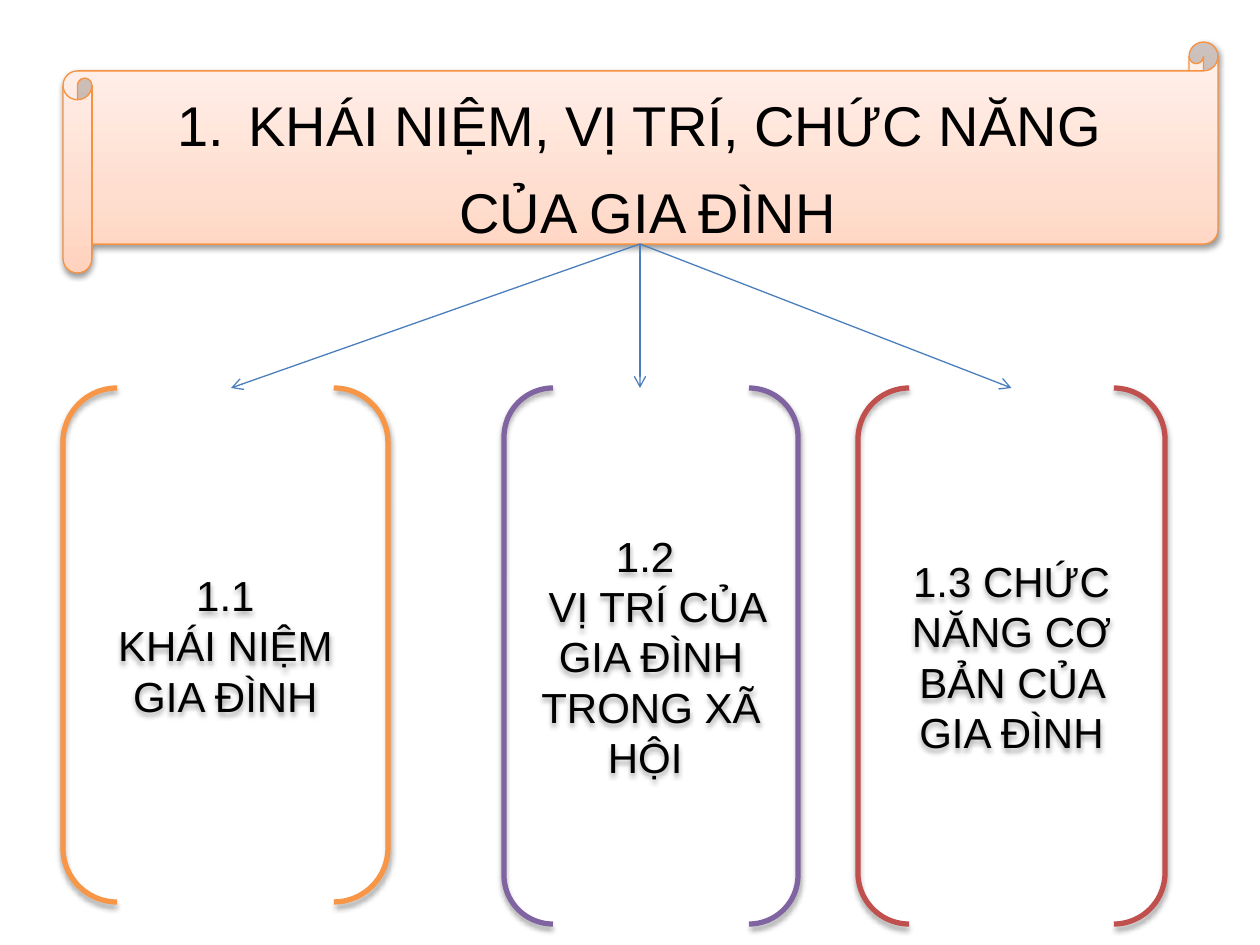
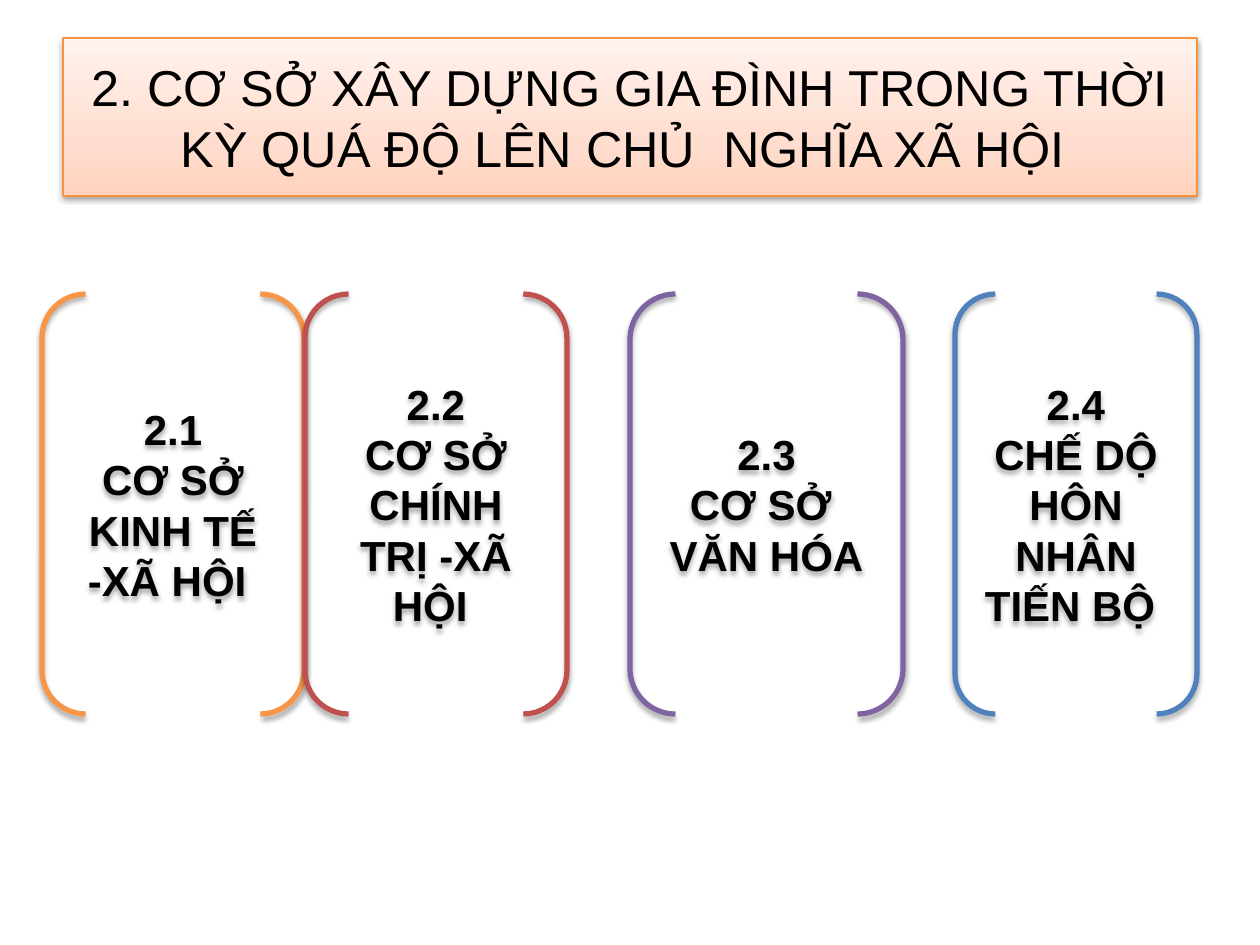
import pptx
import pptx.util
import pptx.dml.color
import pptx.enum.shapes
import pptx.enum.text
import pptx.oxml.ns
from lxml import etree

PX = 914400 / 126
FONT = "Arial"
TEXT = "000000"
ARROW = "4B7EBC"
BAND_LINE = "F69240"
BAND_STOPS = [(0, "FFD2BD"), (35, "FFDED0"), (100, "FFF2ED")]
BAND_SHADOW = {"alpha": 38, "blur": 3.1, "distance": 1.6}
BRACKET_SHADOW = {"alpha": 35, "blur": 3.1, "distance": 1.8}
ORANGE, RED, PURPLE, BLUE = "F79646", "C0504D", "8064A2", "4F81BD"
SHAPES = pptx.enum.shapes.MSO_SHAPE

SLIDES = [
    {
        "title": ["KHÁI NIỆM, VỊ TRÍ, CHỨC NĂNG ", "CỦA GIA ĐÌNH"],
        "band": (SHAPES.HORIZONTAL_SCROLL, (63, 42, 1155, 231)),
        "size": 32,
        "spacing": 1.3,
        "numbered": True,
        "bold": False,
        "top": 388,
        "brackets": [
            (63, 325, 514, ORANGE, ["1.1", " KHÁI NIỆM ", "GIA ĐÌNH"]),
            (504, 294, 536, PURPLE, ["1.2 ", " VỊ TRÍ CỦA GIA ĐÌNH TRONG XÃ HỘI "]),
            (858, 307, 536, RED, ["1.3 CHỨC NĂNG CƠ BẢN CỦA GIA ĐÌNH"]),
        ],
        "arrow_start": (640, 244),
        "arrow_ends": [231, 640, 1013],
    },
    {
        "title": ["2. CƠ SỞ XÂY DỰNG GIA ĐÌNH TRONG THỜI KỲ QUÁ ĐỘ LÊN CHỦ  NGHĨA XÃ HỘI "],
        "band": (SHAPES.RECTANGLE, (63, 38, 1134, 158)),
        "size": 28.8,
        "spacing": None,
        "numbered": False,
        "bold": True,
        "top": 294,
        "brackets": [
            (42, 262, 420, ORANGE, ["2.1", "CƠ SỞ KINH TẾ -XÃ HỘI "]),
            (305, 262, 420, RED, ["2.2", "CƠ SỞ CHÍNH TRỊ -XÃ HỘI "]),
            (630, 273, 420, PURPLE, ["2.3", "CƠ SỞ ", "VĂN HÓA"]),
            (955, 242, 420, BLUE, ["2.4", "CHẾ DỘ HÔN NHÂN TIẾN BỘ "]),
        ],
        "arrow_start": None,
        "arrow_ends": [],
    },
]


def px(*lengths):
    return [round(length * PX) for length in lengths]


def color(value):
    return pptx.dml.color.RGBColor.from_string(value)


def add_xml(parent, tag, **attributes):
    child = etree.SubElement(parent, pptx.oxml.ns.qn(tag))
    for name, value in attributes.items():
        child.set(name, str(value))
    return child


def set_line(shape, value, width):
    shape.line.color.rgb = color(value)
    shape.line.width = pptx.util.Pt(width)


def set_shadow(shape, alpha, blur, distance):
    shape.shadow.inherit = False
    effects = shape._element.spPr.find(pptx.oxml.ns.qn("a:effectLst"))
    outer = add_xml(effects, "a:outerShdw", blurRad=pptx.util.Pt(blur),
                    dist=pptx.util.Pt(distance), dir=5400000, rotWithShape=0)
    add_xml(add_xml(outer, "a:srgbClr", val=TEXT), "a:alpha", val=alpha * 1000)


def set_gradient(shape, stops):
    shape.fill.gradient()
    shape.fill.gradient_angle = 90
    stop_list = shape._element.spPr.find(".//" + pptx.oxml.ns.qn("a:gsLst"))
    for stop in list(stop_list):
        stop_list.remove(stop)
    for position, value in stops:
        stop = add_xml(stop_list, "a:gs", pos=position * 1000)
        add_xml(stop, "a:srgbClr", val=value)


def set_text(shape, lines, size, bold=False, spacing=None):
    frame = shape.text_frame
    frame.text = "\n".join(lines)
    frame.word_wrap = True
    frame.vertical_anchor = pptx.enum.text.MSO_ANCHOR.MIDDLE
    for para in frame.paragraphs:
        para.alignment = pptx.enum.text.PP_ALIGN.CENTER
        para.line_spacing = spacing
        for span in para.runs:
            span.font.name = FONT
            span.font.size = pptx.util.Pt(size)
            span.font.bold = bold
            span.font.color.rgb = color(TEXT)


def number_paragraph(para):
    properties = para._p.get_or_add_pPr()
    indent = pptx.util.Inches(0.56)
    properties.set("marL", str(indent))
    properties.set("indent", str(-indent))
    add_xml(properties, "a:buFont", typeface="+mj-lt")
    add_xml(properties, "a:buAutoNum", type="arabicPeriod")


def add_band(page, content):
    kind, place = content["band"]
    band = page.shapes.add_shape(kind, *px(*place))
    set_gradient(band, BAND_STOPS)
    set_line(band, BAND_LINE, 0.75)
    set_shadow(band, **BAND_SHADOW)
    set_text(band, content["title"], content["size"], spacing=content["spacing"])
    if content["numbered"]:
        number_paragraph(band.text_frame.paragraphs[0])


def add_bracket(page, top, bold, left, width, height, line, lines):
    bracket = page.shapes.add_shape(SHAPES.DOUBLE_BRACKET, *px(left, top, width, height))
    bracket.fill.background()
    set_line(bracket, line, 3)
    set_shadow(bracket, **BRACKET_SHADOW)
    set_text(bracket, lines, 24, bold)
    return bracket


def add_arrow(page, start, end, target):
    arrow = page.shapes.add_connector(
        pptx.enum.shapes.MSO_CONNECTOR.STRAIGHT, *px(*start, *end))
    middle = target.left + target.width / 2
    if abs(arrow.end_x - middle) < 2 * PX:
        arrow.end_connect(target, 0)
    set_line(arrow, ARROW, 0.75)
    add_xml(arrow.line._get_or_add_ln(), "a:tailEnd", type="arrow")
    add_xml(arrow._element.spPr, "a:effectLst")


def main():
    deck = pptx.Presentation()
    deck.slide_width, deck.slide_height = px(1260, 945)
    for content in SLIDES:
        page = deck.slides.add_slide(deck.slide_layouts[6])
        add_band(page, content)
        top = content["top"]
        brackets = [add_bracket(page, top, content["bold"], *bracket)
                    for bracket in content["brackets"]]
        for end, bracket in zip(content["arrow_ends"], brackets):
            add_arrow(page, content["arrow_start"], (end, top), bracket)
    deck.save("out.pptx")


if __name__ == "__main__":
    main()
